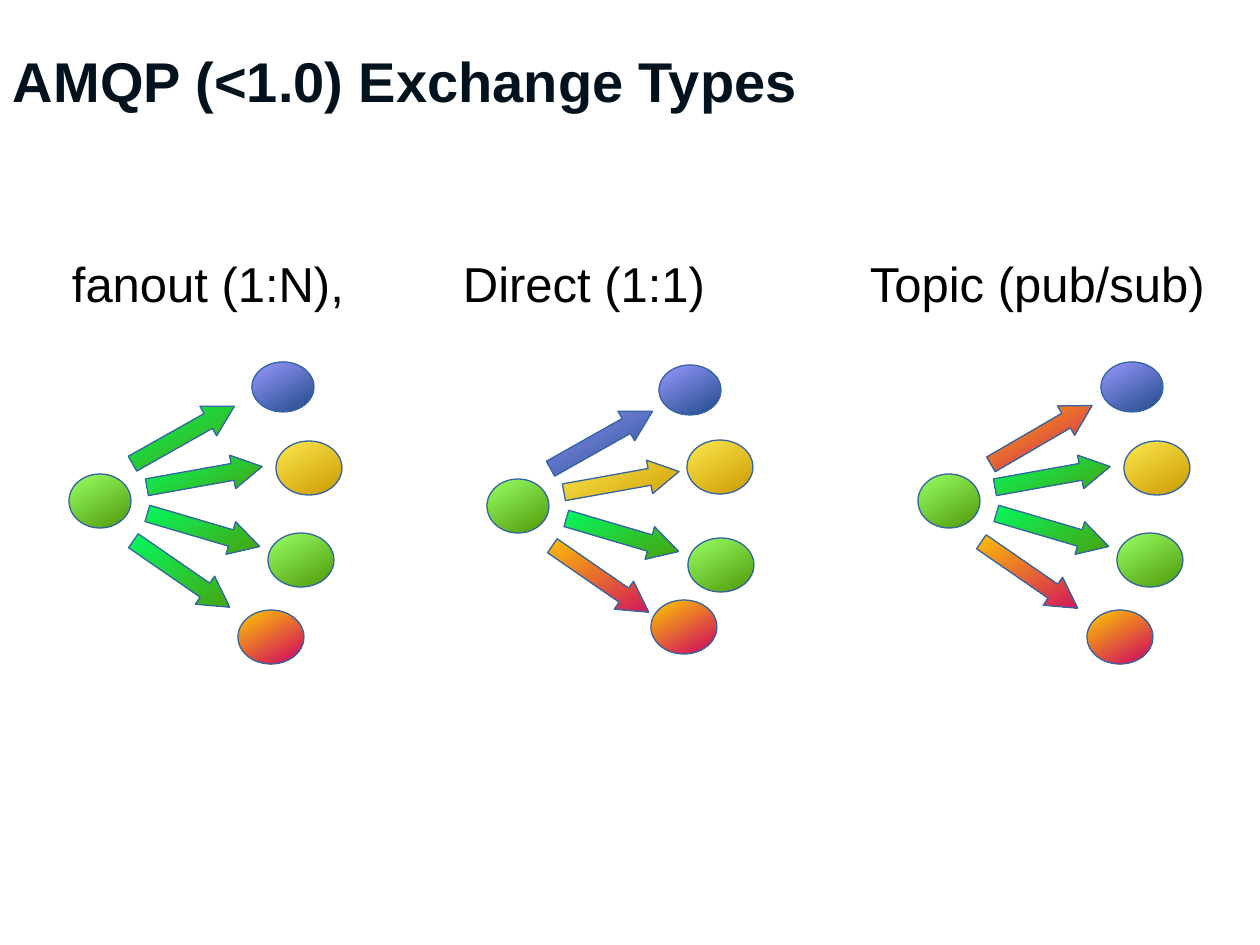
"""Build the slide comparing the AMQP exchange types: fanout, direct and topic."""
from lxml.etree import SubElement
from pptx import Presentation
from pptx.dml.color import RGBColor as RGB
from pptx.enum.shapes import MSO_SHAPE as Shape
from pptx.enum.text import MSO_ANCHOR as Anchor, MSO_AUTO_SIZE as AutoSize, PP_ALIGN as Align
from pptx.oxml.ns import qn
from pptx.util import Emu, Pt

PX = 914400 / 126
COLORS = {"title": "00121D", "label": "000000", "outline": "3465A4"}
GRADIENTS = {
    "arrow_green": ("00FF66", "4E9A06"),
    "green": ("99FF66", "4E9A06"),
    "blue": ("9999FF", "204A87"),
    "yellow": ("FCE94F", "CC9900"),
    "orange": ("FFCC00", "CC0066"),
}


def write(holder, text, *, size, color, bold=False, anchor=Anchor.TOP,
          insets=(0, 0), spacing=None, tabs=()):
    frame = holder.text_frame
    frame.word_wrap = True
    frame.auto_size = AutoSize.NONE
    frame.vertical_anchor = anchor
    frame.margin_left = frame.margin_right = Emu(round(insets[0] * PX))
    frame.margin_top = frame.margin_bottom = Emu(round(insets[1] * PX))
    paragraph = frame.paragraphs[0]
    if tabs:
        stops = SubElement(paragraph._p.get_or_add_pPr(), qn("a:tabLst"))
        for stop in tabs:
            SubElement(stops, qn("a:tab"), pos=str(round(stop * PX)), algn="l")
    paragraph.alignment = Align.LEFT
    if spacing:
        paragraph.line_spacing = Pt(spacing)
    run = paragraph.add_run()
    run.text = text
    run.font.name = "Arial"
    run.font.size = Pt(size)
    run.font.bold = bold
    run.font.color.rgb = RGB.from_string(COLORS[color])


def paint(figure, gradient):
    figure.shadow.inherit = False
    figure.fill.gradient()
    figure.fill.gradient_angle = 300
    for stop, tone, position in zip(figure.fill.gradient_stops, GRADIENTS[gradient], (0, 1)):
        stop.color.rgb = RGB.from_string(tone)
        stop.position = position
    figure._element.spPr.find(qn("a:gradFill")).set("rotWithShape", "0")
    figure.line.color.rgb = RGB.from_string(COLORS["outline"])
    figure.line.width = Pt(0.75)


deck = Presentation()
deck.slide_width, deck.slide_height = Emu(round(1260 * PX)), Emu(round(945 * PX))
slide = deck.slides.add_slide(deck.slide_layouts[5])
shapes = slide.shapes

title = shapes.title
title.left, title.top, title.width, title.height = [Emu(round(v * PX)) for v in (13, 33, 1196, 106)]
write(title, "AMQP (<1.0) Exchange Types", size=32, color="title", bold=True,
      anchor=Anchor.MIDDLE, spacing=32)

labels = shapes.add_textbox(*[Emu(round(v * PX)) for v in (59, 248, 1171, 71)])
write(labels, "fanout (1:N),\tDirect (1:1)\tTopic (pub/sub)", size=28, color="label",
      insets=(13, 6), tabs=(391, 798))

ARROW_WIDTH, ARROW_HEIGHT, SHAFT = 117, 34, 87
ARROW_OUTLINE = [
    (0, ARROW_HEIGHT / 4), (SHAFT, ARROW_HEIGHT / 4), (SHAFT, 0),
    (ARROW_WIDTH, ARROW_HEIGHT / 2), (SHAFT, ARROW_HEIGHT),
    (SHAFT, ARROW_HEIGHT * 3 / 4), (0, ARROW_HEIGHT * 3 / 4),
]
RECEIVER_SIZES = {"blue": (62, 50), "yellow": (66, 54), "green": (66, 54), "orange": (66, 54)}

exchanges = [
    {
        "sender": (69, 474),
        "receivers": [(252, 362), (276, 441), (268, 533), (238, 610)],
        "arrows": [(125, 418, 330.6, "arrow_green"), (146, 460, 349.8, "arrow_green"),
                   (145, 513, 16.4, "arrow_green"), (123, 557, 34.6, "arrow_green")],
    },
    {
        "sender": (487, 479),
        "receivers": [(659, 365), (687, 440), (688, 538), (651, 600)],
        "arrows": [(543, 423, 330.6, "blue"), (563, 465, 349.8, "yellow"),
                   (564, 518, 16.4, "arrow_green"), (542, 562, 34.6, "orange")],
    },
    {
        "sender": (918, 474),
        "receivers": [(1101, 362), (1124, 441), (1117, 533), (1087, 610)],
        "arrows": [(983, 418, 329.8, "orange"), (994, 460, 349.8, "arrow_green"),
                   (994, 513, 16.4, "arrow_green"), (971, 558, 34.6, "orange")],
    },
]

for exchange in exchanges:
    nodes = [("green", exchange["sender"], (62, 54))]
    nodes += [(name, place, size) for (name, size), place
              in zip(RECEIVER_SIZES.items(), exchange["receivers"])]
    for gradient, place, size in nodes:
        node = shapes.add_shape(Shape.OVAL, *[Emu(round(v * PX)) for v in place + size])
        paint(node, gradient)

    for left, top, angle, gradient in exchange["arrows"]:
        corners = [((left + x) * PX, (top + y) * PX) for x, y in ARROW_OUTLINE]
        builder = shapes.build_freeform(*corners[0])
        builder.add_line_segments(corners[1:], close=True)
        arrow = builder.convert_to_shape()
        arrow.rotation = angle
        paint(arrow, gradient)

deck.save("out.pptx")
